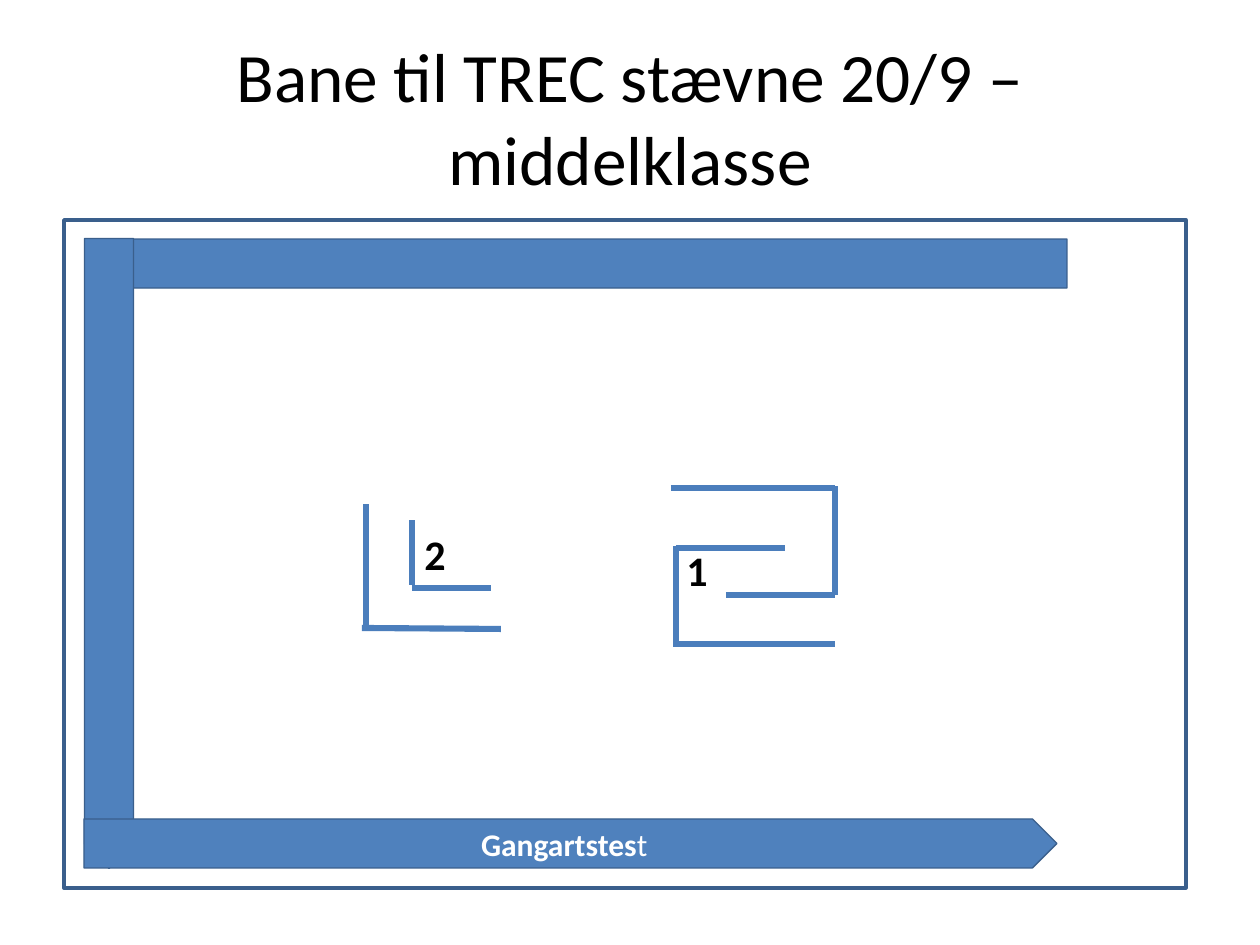
from dataclasses import dataclass

import pptx
import pptx.dml.color
import pptx.enum.shapes
import pptx.enum.text
import pptx.oxml
import pptx.oxml.ns
import pptx.util
from lxml import etree

EMU_PER_PX = 914400 / 126
FONT = "Calibri"
COLORS = {
    "black": "000000",
    "white": "FFFFFF",
    "outline": "3A5F8C",
    "pole": "4B7EBC",
    "lane": "4F81BD",
}
Shape = pptx.enum.shapes.MSO_SHAPE
Align = pptx.enum.text.PP_ALIGN
Anchor = pptx.enum.text.MSO_ANCHOR


@dataclass(frozen=True)
class Box:
    left: int
    top: int
    width: int
    height: int


@dataclass(frozen=True)
class Pole:
    x1: int
    y1: int
    x2: int
    y2: int


@dataclass(frozen=True)
class Obstacle:
    number: str
    label: Box
    poles: tuple[Pole, ...]


@dataclass(frozen=True)
class Lane:
    box: Box
    rotation: int


TITLE = Box(63, 38, 1134, 157)
ARENA = Box(64, 220, 1122, 668)
LANE_WIDTH = 49
LANES = (
    Lane(Box(94, 239, 973, LANE_WIDTH), 180),
    Lane(Box(-206, 529, 630, LANE_WIDTH), 90),
    Lane(Box(84, 819, 973, LANE_WIDTH), 0),
)
OBSTACLES = (
    Obstacle("1", Box(674, 538, 47, 63), (
        Pole(671, 488, 835, 488),
        Pole(676, 644, 835, 644),
        Pole(676, 647, 676, 546),
        Pole(835, 595, 835, 486),
        Pole(676, 548, 785, 548),
        Pole(726, 595, 835, 595),
    )),
    Obstacle("2", Box(412, 522, 47, 63), (
        Pole(366, 628, 366, 504),
        Pole(412, 585, 412, 520),
        Pole(362, 628, 501, 629),
        Pole(412, 588, 491, 588),
    )),
)


def emu(px: int) -> int:
    return round(px * EMU_PER_PX)


def color(name: str) -> pptx.dml.color.RGBColor:
    return pptx.dml.color.RGBColor.from_string(COLORS[name])


def place(box: Box) -> tuple[int, int, int, int]:
    return emu(box.left), emu(box.top), emu(box.width), emu(box.height)


def format_run(run, size: float, color_name: str, bold: bool) -> None:
    run.font.name = FONT
    run.font.size = pptx.util.Pt(size)
    run.font.bold = bold
    run.font.color.rgb = color(color_name)


def add_text(shapes, box: Box, text: str, size: float, bold: bool, wrap: bool):
    shape = shapes.add_textbox(*place(box))
    text_frame = shape.text_frame
    text_frame.word_wrap = wrap
    text_frame.text = text
    format_run(text_frame.paragraphs[0].runs[0], size, "black", bold)
    return shape


def add_filled(shapes, kind, box: Box, fill: str, line_width: float):
    shape = shapes.add_shape(kind, *place(box))
    shape.shadow.inherit = False
    shape.fill.solid()
    shape.fill.fore_color.rgb = color(fill)
    shape.line.color.rgb = color("outline")
    shape.line.width = pptx.util.Pt(line_width)
    return shape


def add_pole(shapes, pole: Pole) -> None:
    connector = shapes.add_connector(
        pptx.enum.shapes.MSO_CONNECTOR.STRAIGHT,
        emu(pole.x1), emu(pole.y1), emu(pole.x2), emu(pole.y2),
    )
    connector.line.color.rgb = color("pole")
    connector.line.width = pptx.util.Pt(3.5)
    etree.SubElement(connector._element.spPr, pptx.oxml.ns.qn("a:effectLst"))


def add_obstacle(shapes, obstacle: Obstacle) -> None:
    group = shapes.add_group_shape()
    for pole in obstacle.poles:
        add_pole(group.shapes, pole)
    add_text(group.shapes, obstacle.label, obstacle.number, 24, True, False)


def add_lane(shapes, lane: Lane):
    shape = add_filled(shapes, Shape.PENTAGON, lane.box, "lane", 0)
    shape.rotation = lane.rotation
    return shape


def main() -> None:
    presentation = pptx.Presentation()
    presentation.slide_width = emu(1260)
    presentation.slide_height = emu(945)
    slide = presentation.slides.add_slide(presentation.slide_layouts[6])
    shapes = slide.shapes

    title = add_text(
        shapes, TITLE, "Bane til TREC stævne 20/9 – middelklasse", 39.6, False, True
    )
    title.text_frame.vertical_anchor = Anchor.MIDDLE
    title.text_frame.paragraphs[0].alignment = Align.CENTER

    add_filled(shapes, Shape.RECTANGLE, ARENA, "white", 2)
    for obstacle in OBSTACLES:
        add_obstacle(shapes, obstacle)
    lanes = [add_lane(shapes, lane) for lane in LANES]

    text_frame = lanes[-1].text_frame
    text_frame.vertical_anchor = Anchor.MIDDLE
    paragraph = text_frame.paragraphs[0]
    paragraph.alignment = Align.CENTER
    for text, bold in (("Gangartstes", True), ("t", False)):
        run = paragraph.add_run()
        run.text = text
        format_run(run, 18, "white", bold)

    presentation.save("out.pptx")


if __name__ == "__main__":
    main()
